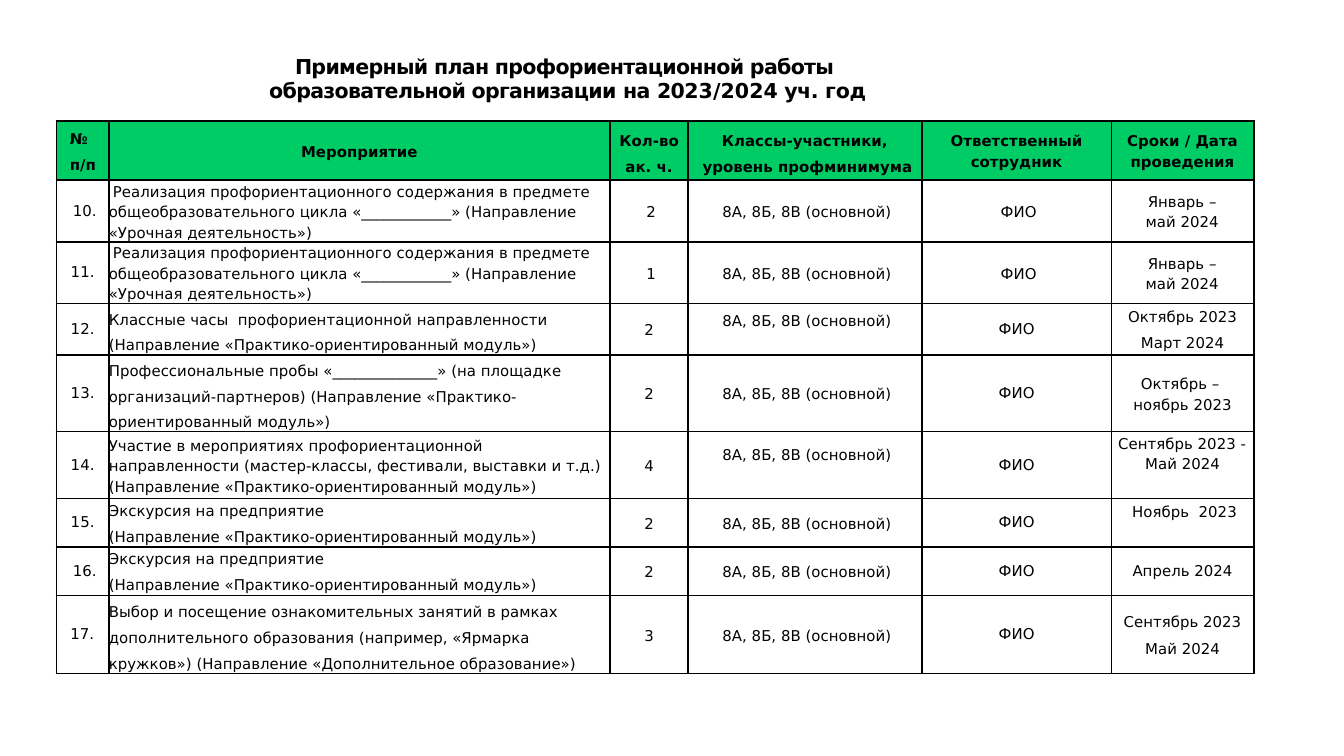
from lxml import etree
from pptx import Presentation
from pptx import util as u
from pptx.dml import color as col
from pptx.enum import text as t
from pptx.oxml import ns

HUES = {"ink": "000000", "head": "00CC66", "row": "FFFFFF"}
FONT = "DejaVu Sans"
MID, LEFT = t.PP_ALIGN.CENTER, t.PP_ALIGN.LEFT


def rgb(name):
    return col.RGBColor.from_string(HUES[name])


def fill(cell, lines, hue="row", bold=False, al=MID, lead=None, after=0,
         ind=0, left=0, foot=0):
    """Write the lines into a table cell and give it borders and a fill."""
    form = {"margin_left": 0, "margin_right": 0, "margin_top": 0,
            "margin_bottom": u.Inches(foot),
            "vertical_anchor": t.MSO_ANCHOR.MIDDLE}
    for key, val in form.items():
        setattr(cell, key, val)
    box = cell.text_frame
    for i, line in enumerate(lines):
        par = box.paragraphs[0] if i == 0 else box.add_paragraph()
        par.text = line
        par.alignment = al
        par.space_after = u.Pt(after)
        if lead:
            par.line_spacing = u.Pt(lead)
        props = par._p.get_or_add_pPr()
        props.set("marL", str(u.Inches(left)))
        props.set("indent", str(u.Inches(ind)))
        look = {"name": FONT, "size": u.Pt(8), "bold": bold}
        for key, val in look.items():
            setattr(par.runs[0].font, key, val)
        par.runs[0].font.color.rgb = rgb("ink")
    props = cell._tc.get_or_add_tcPr()
    for side in ("lnL", "lnR", "lnT", "lnB"):
        edge = etree.SubElement(props, ns.qn("a:" + side), w=str(u.Pt(1)))
        ink = etree.SubElement(edge, ns.qn("a:solidFill"))
        etree.SubElement(ink, ns.qn("a:srgbClr"), val=HUES["ink"])
    cell.fill.solid()
    cell.fill.fore_color.rgb = rgb(hue)


# A 16:9 slide
deck = Presentation()
deck.slide_width = u.Inches(10)
deck.slide_height = u.Inches(10 * 9 / 16)
slide = deck.slides.add_slide(deck.slide_layouts[6])

# Title: each run is a text with its letter spacing in points
title = [
    [("Примерный план профориентационной работы ", -0.4)],
    [("образовательной организации ", -0.4), ("на ", -0.3), ("202", -0.4),
     ("3", -0.5), ("/", -1.3), ("2", -1.5), ("0", -0.4), ("2", -0.5),
     ("4 ", -0.4), ("уч. ", -0.3), ("год", -0.1)],
]
box = slide.shapes.add_textbox(u.Inches(0.34), u.Inches(0.39),
                               u.Inches(7.77), u.Inches(0.38)).text_frame
form = {"margin_left": 0, "margin_right": 0, "margin_top": u.Inches(0.01),
        "margin_bottom": 0, "word_wrap": True,
        "auto_size": t.MSO_AUTO_SIZE.SHAPE_TO_FIT_TEXT}
for key, val in form.items():
    setattr(box, key, val)
for i, runs in enumerate(title):
    par = box.paragraphs[0] if i == 0 else box.add_paragraph()
    par.alignment = MID
    for words, gap in runs:
        run = par.add_run()
        run.text = words
        look = {"name": FONT, "size": u.Pt(11), "bold": True}
        for key, val in look.items():
            setattr(run.font, key, val)
        run.font.color.rgb = rgb("ink")
        run.font._element.set("spc", str(round(gap * 100)))

# Plan rows: height, event, its format, hours, dates, their format, class format
HALL = "(Направление «Практико-ориентированный модуль»)"
lesson = ["Реализация профориентационного содержания в предмете "
          "общеобразовательного цикла «____________» "
          "(Направление «Урочная деятельность»)"]
trip = ["Экскурсия на предприятие", HALL]
spring = ["Январь – ", "май 2024 "]
inset = {"lead": 11, "ind": 0.03}
raised = {"lead": 13.7, "foot": 0.2}
plan = [
    (0.46, lesson, inset, "2", spring, inset, {}),
    (0.46, lesson, inset, "1", spring, inset, {}),
    (0.38, ["Классные часы  профориентационной направленности " + HALL],
     {"lead": 13.4}, "2", ["Октябрь 2023", "Март 2024"],
     {"lead": 11, "after": 3}, {**raised, "foot": 0.18}),
    (0.57, ["Профессиональные пробы «______________» (на площадке "
            "организаций-партнеров) " + HALL],
     {"lead": 13.7}, "2", ["Октябрь – ", "ноябрь 2023"], {"lead": 11}, {}),
    (0.5, ["Участие в мероприятиях профориентационной направленности "
           "(мастер-классы, фестивали, выставки и т.д.) " + HALL],
     {"lead": 11}, "4", ["Сентябрь 2023 -  Май 2024"],
     {**inset, "foot": 0.18}, raised),
    (0.36, trip, {"lead": 11, "after": 3}, "2", ["Ноябрь  2023"],
     {**inset, "foot": 0.18}, {}),
    (0.36, trip, {"lead": 11, "after": 3}, "2", ["Апрель 2024"], {}, {}),
    (0.58, ["Выбор и посещение ознакомительных занятий в рамках "
            "дополнительного образования (например, «Ярмарка кружков») "
            "(Направление «Дополнительное образование»)"],
     {"lead": 13.9}, "3", ["Сентябрь 2023", "Май 2024"],
     {"lead": 11, "after": 3}, {}),
]
heads = [
    (0.39, ["№", "п/п"], {"al": LEFT, "left": 0.1, "lead": 11, "after": 3}),
    (3.73, ["Мероприятие"], {"lead": 11}),
    (0.58, ["Кол-во ак. ч."], {"lead": 13.9}),
    (1.74, ["Классы-участники,", " уровень профминимума"], {"lead": 13.9}),
    (1.41, ["Ответственный сотрудник"], {"lead": 11, "after": 6}),
    (1.06, ["Сроки / Дата проведения"], {"lead": 11, "after": 6}),
]

grid = slide.shapes.add_table(len(plan) + 1, len(heads), u.Inches(0.42),
                              u.Inches(0.9), u.Inches(8.91),
                              u.Inches(4.11)).table
grid.first_row = grid.horz_banding = False
grid.rows[0].height = u.Inches(0.44)
for c, (wide, lines, form) in enumerate(heads):
    grid.columns[c].width = u.Inches(wide)
    fill(grid.cell(0, c), lines, hue="head", bold=True, **form)

for r, (tall, event, form, hours, dates, when, group) in enumerate(plan, 1):
    grid.rows[r].height = u.Inches(tall)
    first = event is lesson
    mark = "17. " if r == len(plan) else f"{r + 9}."
    cells = [
        ([mark], {"ind": 0.03 if r in (1, 7, 8) else 0}),
        (event, {"al": LEFT, **form}),
        ([hours], inset if first else {"lead": 11}),
        (["8А, 8Б, 8В (основной)"], {**inset, **group}),
        (["ФИО"], inset if first else {}),
        (dates, when),
    ]
    for c, (lines, style) in enumerate(cells):
        fill(grid.cell(r, c), lines, **style)

deck.save("out.pptx")
